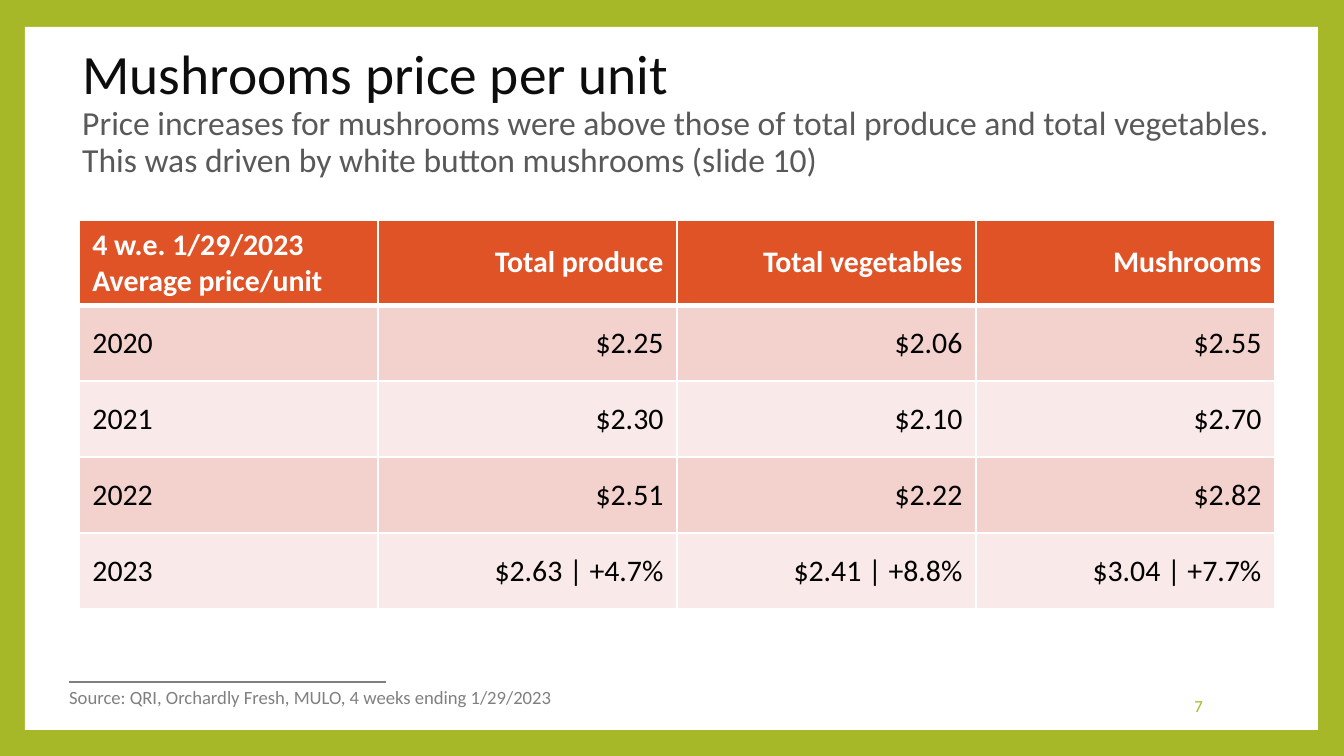
"""Build the mushroom price per unit slide."""
from lxml import etree
from pptx import Presentation
from pptx import util as u
from pptx.dml.color import RGBColor
from pptx.enum import shapes, text
from pptx.oxml import ns

C = {"green": "A6B727", "white": "FFFFFF", "orange": "DF5327", "band": "F3D1CD",
     "pale": "F9E9E8", "black": "000000", "title": "0D0D0D", "subtitle": "595959",
     "grey": "808080"}
FONT = "Calibri"
PX = 914400 / 134.4
ROWS = [
    ("4 w.e. 1/29/2023\nAverage price/unit", "Total produce", "Total vegetables", "Mushrooms"),
    ("2020", "$2.25", "$2.06", "$2.55"),
    ("2021", "$2.30", "$2.10", "$2.70"),
    ("2022", "$2.51", "$2.22", "$2.82"),
    ("2023", "$2.63 | +4.7%", "$2.41 | +8.8%", "$3.04 | +7.7%"),
]


def px(*values):
    return [u.Emu(round(v * PX)) for v in values]


def style(font, size, color, bold=False):
    font.name, font.size, font.bold = FONT, u.Pt(size), bold
    font.color.rgb = RGBColor.from_string(C[color])


prs = Presentation()
prs.slide_width, prs.slide_height = px(1344, 756)
slide = prs.slides.add_slide(prs.slide_layouts[6])
slide.background.fill.solid()
slide.background.fill.fore_color.rgb = RGBColor.from_string(C["green"])

panel = slide.shapes.add_shape(shapes.MSO_SHAPE.RECTANGLE, *px(25, 27, 1293, 703))
panel.shadow.inherit = False
panel.fill.solid()
panel.fill.fore_color.rgb = RGBColor.from_string(C["white"])
panel.line.fill.background()

rule = slide.shapes.add_connector(shapes.MSO_CONNECTOR.STRAIGHT, *px(69, 682, 386, 682))
rule.line.color.rgb = RGBColor.from_string(C["grey"])
rule.line.width = u.Pt(0.79)
etree.SubElement(rule._element.spPr, ns.qn("a:effectLst"))

tf = slide.shapes.add_textbox(*px(69, 77, 1218, 72)).text_frame
tf.word_wrap = True
tf.vertical_anchor = text.MSO_ANCHOR.MIDDLE
p = tf.paragraphs[0]
p.line_spacing = 0.9
r = p.add_run()
r.text = "Mushrooms price per unit"
style(r.font, 29.7, "title")
p.add_line_break()
r = p.add_run()
r.text = ("Price increases for mushrooms were above those of total produce and total "
          "vegetables. This was driven by white button mushrooms (slide 10)")
style(r.font, 18, "subtitle")

tf = slide.shapes.add_textbox(*px(1028, 686, 188, 40)).text_frame
tf.word_wrap = True
tf.vertical_anchor = text.MSO_ANCHOR.MIDDLE
p = tf.paragraphs[0]
p.text = "7"
p.alignment = text.PP_ALIGN.RIGHT
style(p.font, 9, "green")

tf = slide.shapes.add_textbox(*px(56, 679, 513, 36)).text_frame
tf.word_wrap = False
p = tf.paragraphs[0]
p.text = "Source: QRI, Orchardly Fresh, MULO, 4 weeks ending 1/29/2023"
style(p.font, 10, "grey")

table = slide.shapes.add_table(len(ROWS), 4, *px(79, 220, 1196, 388)).table
for col in table.columns:
    col.width = px(299)[0]
for i, values in enumerate(ROWS):
    header = i == 0
    table.rows[i].height = px(84 if header else 76)[0]
    for j, value in enumerate(values):
        cell = table.cell(i, j)
        cell.text = value
        cell.vertical_anchor = text.MSO_ANCHOR.MIDDLE
        for p in cell.text_frame.paragraphs:
            p.alignment = text.PP_ALIGN.RIGHT if j else text.PP_ALIGN.LEFT
            style(p.font, 16, "white" if header else "black", header)
        for side in "LRTB":
            thick = (header and side == "B") or (i == 1 and side == "T")
            ln = etree.SubElement(cell._tc.get_or_add_tcPr(), ns.qn("a:ln" + side),
                                  w=str(u.Pt(3 if thick else 1)))
            fill = etree.SubElement(ln, ns.qn("a:solidFill"))
            etree.SubElement(fill, ns.qn("a:srgbClr"), val=C["white"])
        cell.fill.solid()
        shade = "orange" if header else "band" if i % 2 else "pale"
        cell.fill.fore_color.rgb = RGBColor.from_string(C[shade])

prs.save("out.pptx")
